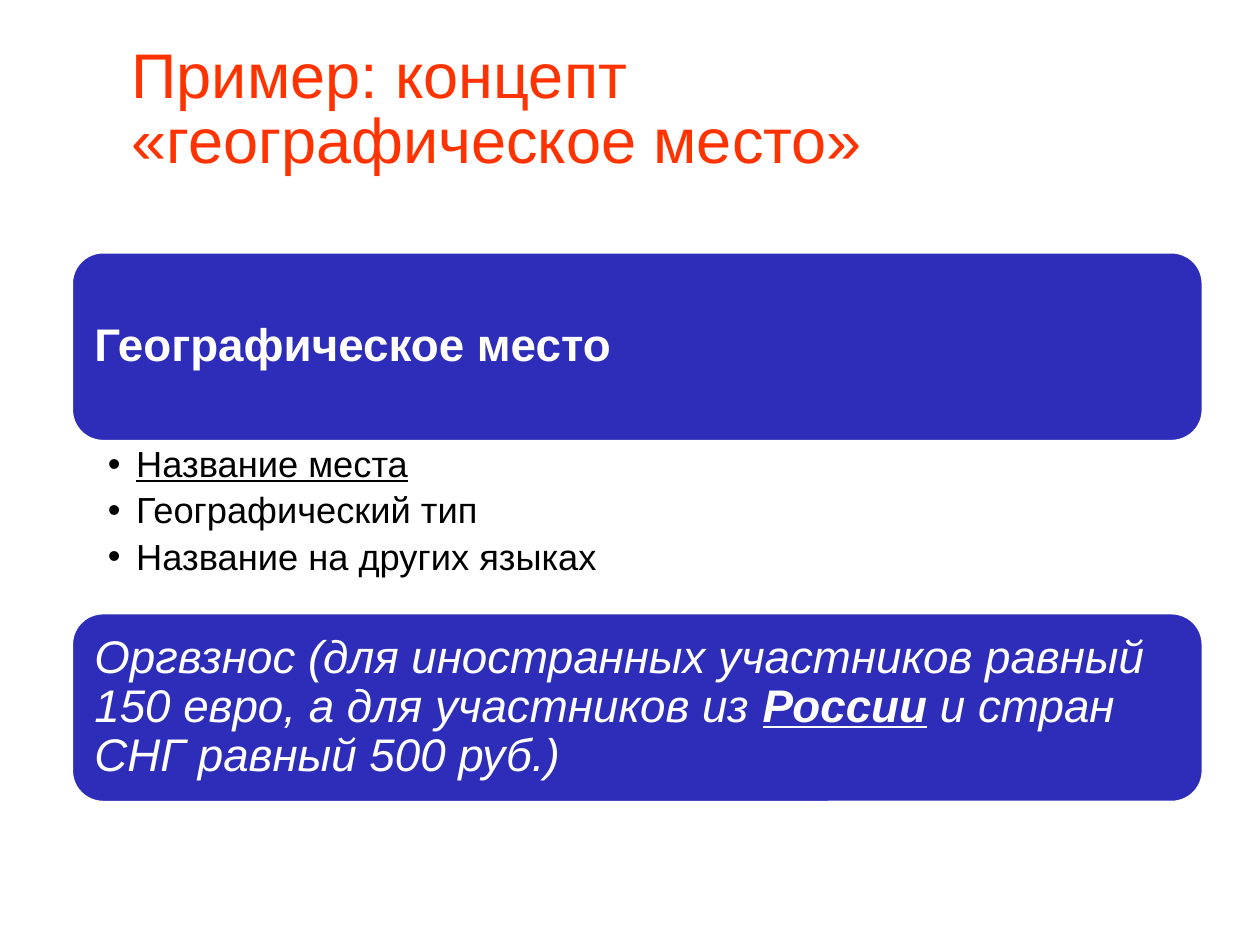
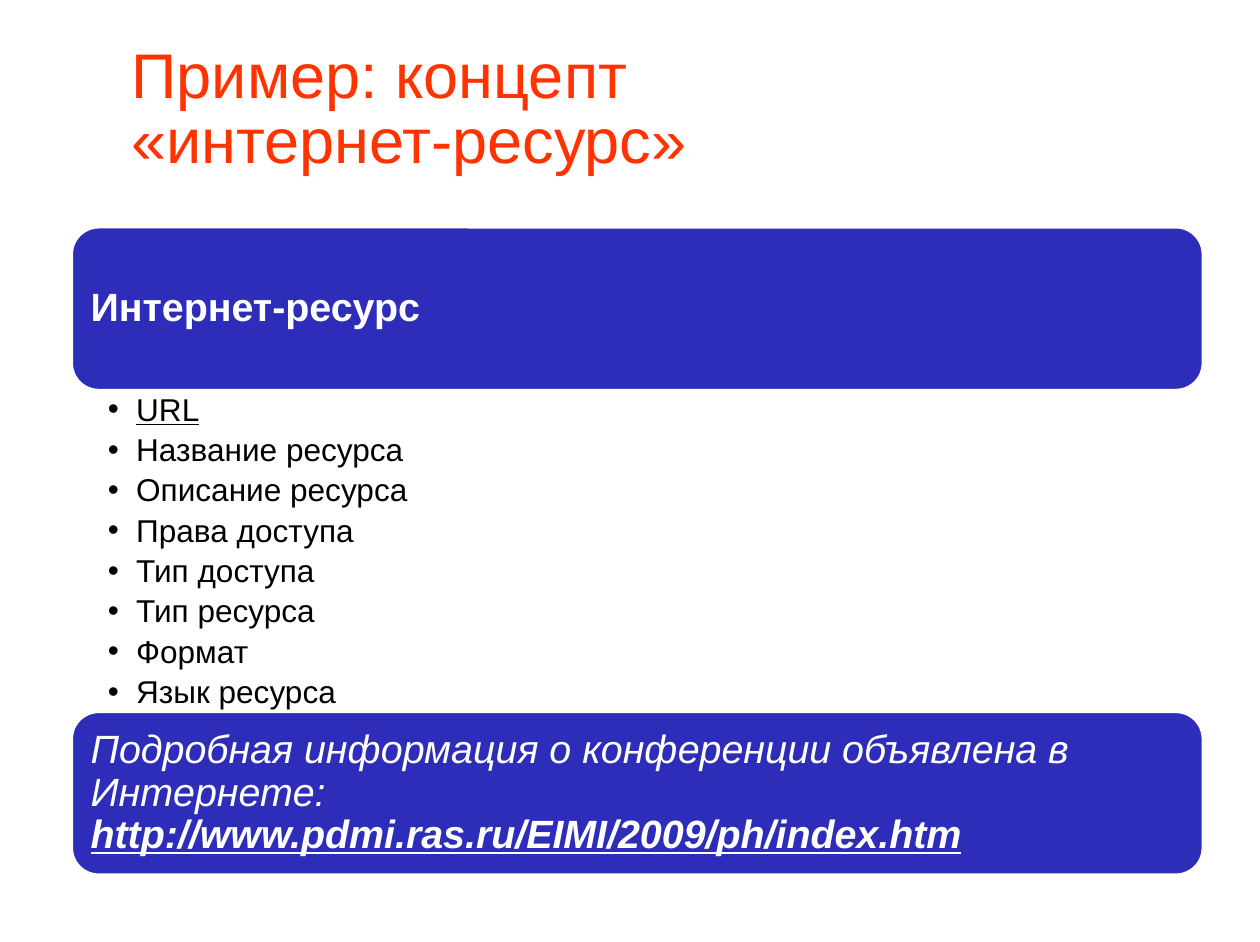
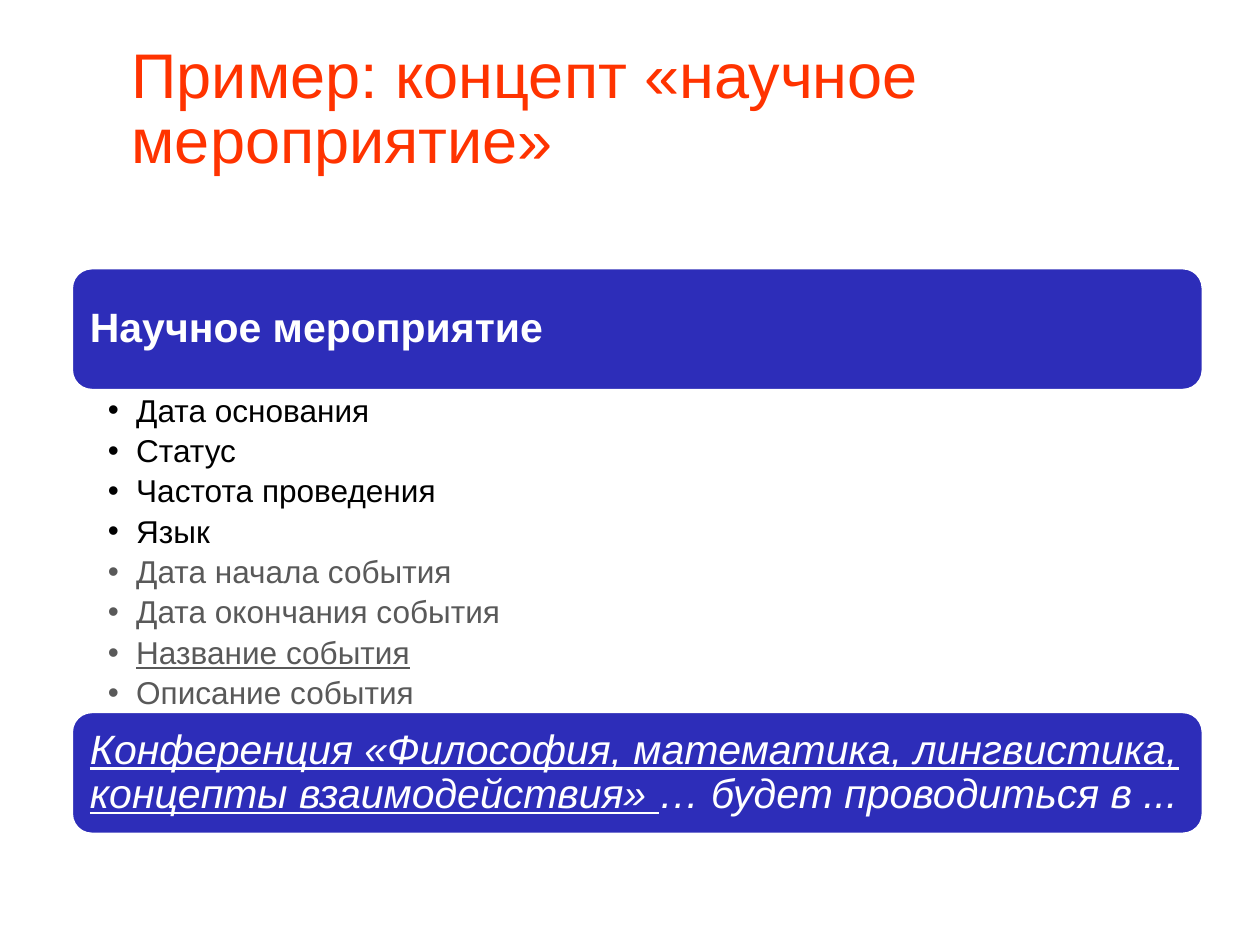
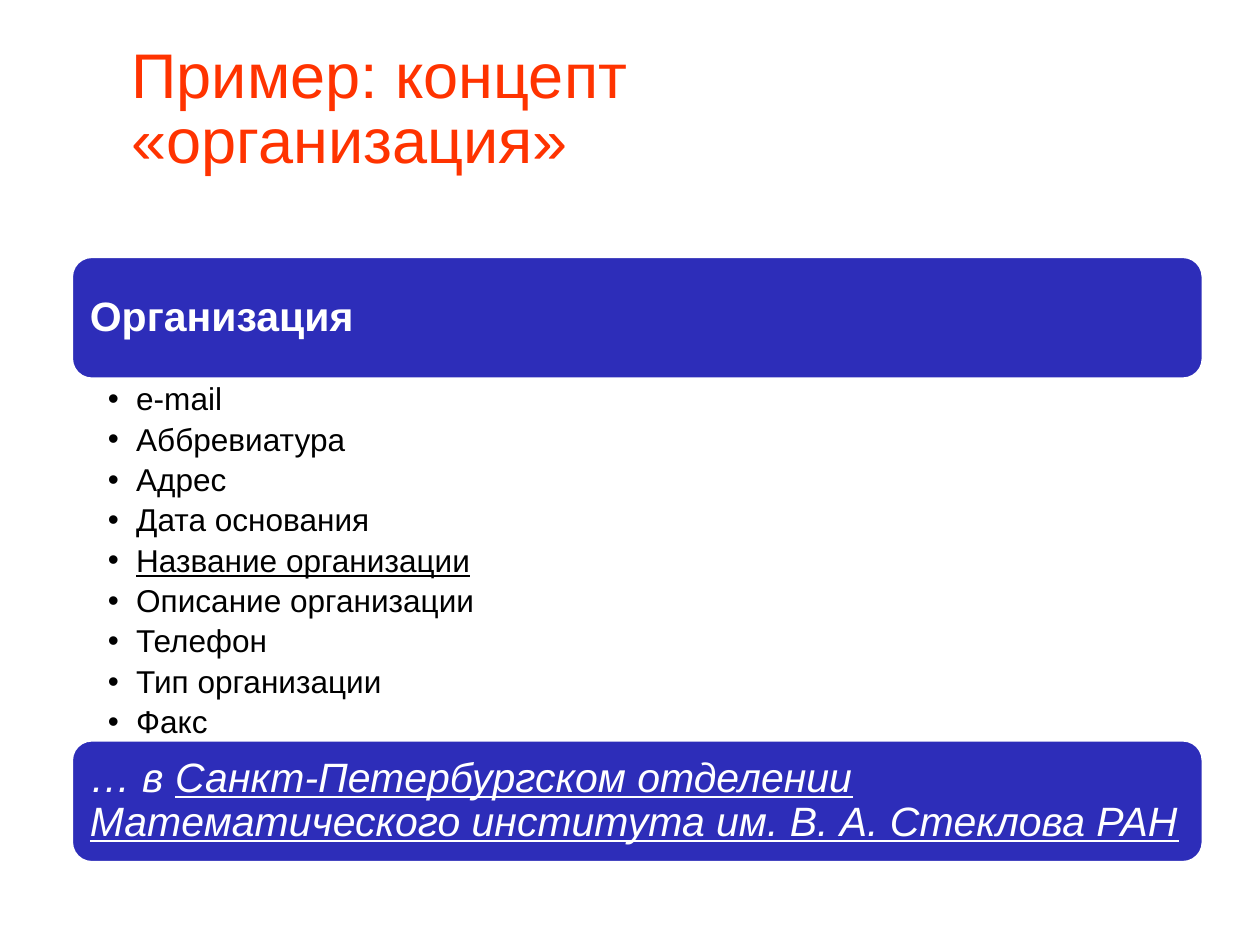
from dataclasses import dataclass

from lxml import etree
from pptx import Presentation, util as u
from pptx.dml.color import RGBColor
from pptx.enum import shapes, text
from pptx.oxml.ns import qn

PX = 9144  # EMU in one px, 100 px to the inch
FONT = "Arial"
RED = RGBColor(0xFF, 0x33, 0x00)
BLUE = RGBColor(0x2D, 0x2D, 0xB9)
WHITE = RGBColor(0xFF, 0xFF, 0xFF)
BLACK = RGBColor(0x00, 0x00, 0x00)
GREY = RGBColor(0x59, 0x59, 0x59)

LEFT, WIDE = 63, 997
INDENT = 25
AFTER = 0.2  # space after a list item, as a share of its text size


@dataclass(frozen=True)
class Bit:
    """A run of text with its own style."""
    words: str
    bold: bool = False
    slant: bool = False
    under: bool = False
    color: RGBColor = WHITE


@dataclass(frozen=True)
class Item:
    words: str
    under: bool = False
    color: RGBColor = BLACK


@dataclass(frozen=True)
class Concept:
    """One slide: a head bar, a list of fields and a sample bar."""
    title: str
    head: str
    items: list[Item]
    sample: list[Bit]
    top: int
    bar: int
    body: int
    size: int
    small: int
    pad: int
    inset: tuple[int, int]
    gap: int = 0


CONCEPTS = [
    Concept(
        "Пример: концепт «географическое место»",
        "Географическое место",
        [Item("Название места", under=True), Item("Географический тип"),
         Item("Название на других языках")],
        [Bit("Оргвзнос (для иностранных участников равный "
             "150 евро, а для участников из ", slant=True),
         Bit("России", bold=True, slant=True, under=True),
         Bit(" и стран СНГ равный 500 руб.)", slant=True)],
        top=222, bar=167, body=125, size=29, small=23, pad=12,
        inset=(23, 4), gap=26),
    Concept(
        "Пример: концепт «интернет-ресурс»",
        "Интернет-ресурс",
        [Item("URL", under=True), Item("Название ресурса"),
         Item("Описание ресурса"), Item("Права доступа"),
         Item("Тип доступа"), Item("Тип ресурса"), Item("Формат"),
         Item("Язык ресурса")],
        [Bit("Подробная информация о конференции объявлена в Интернете: ",
             slant=True),
         Bit("http://www.pdmi.ras.ru/EIMI/2009/ph/index.htm",
             bold=True, slant=True, under=True)],
        top=200, bar=144, body=283, size=25, small=20, pad=10,
        inset=(19, 3)),
    Concept(
        "Пример: концепт «научное мероприятие»",
        "Научное мероприятие",
        [Item("Дата основания"), Item("Статус"), Item("Частота проведения"),
         Item("Язык"), Item("Дата начала события", color=GREY),
         Item("Дата окончания события", color=GREY),
         Item("Название события", under=True, color=GREY),
         Item("Описание события", color=GREY)],
        [Bit("Конференция «Философия, математика, лингвистика, "
             "концепты взаимодействия» ", slant=True, under=True),
         Bit("… будет проводиться в ...", slant=True)],
        top=236, bar=108, body=283, size=26, small=20, pad=11,
        inset=(20, 4)),
    Concept(
        "Пример: концепт «организация»",
        "Организация",
        [Item("e-mail"), Item("Аббревиатура"), Item("Адрес"),
         Item("Дата основания"), Item("Название организации", under=True),
         Item("Описание организации"), Item("Телефон"),
         Item("Тип организации"), Item("Факс")],
        [Bit("… в ", slant=True),
         Bit("Санкт-Петербургском отделении Математического института "
             "им. В. А. Стеклова РАН", slant=True, under=True)],
        top=226, bar=108, body=318, size=26, small=20, pad=11,
        inset=(20, 4)),
]


def px(*nums: int) -> list[u.Emu]:
    return [u.Emu(n * PX) for n in nums]


def frame(shape, left: int, top: int, right: int, base: int, anchor):
    """Set the margins and the anchor, and return the text frame."""
    box = shape.text_frame
    box.word_wrap = True
    box.auto_size = text.MSO_AUTO_SIZE.NONE
    (box.margin_left, box.margin_top,
     box.margin_right, box.margin_bottom) = px(left, top, right, base)
    box.vertical_anchor = anchor
    return box


def write(para, bits: list[Bit], size: int, pitch: float = 0.9) -> None:
    para.alignment = text.PP_ALIGN.LEFT
    para.line_spacing = pitch
    for bit in bits:
        run = para.add_run()
        run.text = bit.words
        font = run.font
        font.name, font.size = FONT, u.Pt(size)
        font.bold, font.italic, font.underline = bit.bold, bit.slant, bit.under
        font.color.rgb = bit.color


def bullet(para) -> None:
    props = para._p.get_or_add_pPr()
    props.set("marL", str(INDENT * PX))
    props.set("indent", str(-INDENT * PX))
    etree.SubElement(props, qn("a:buFont")).set("typeface", FONT)
    etree.SubElement(props, qn("a:buChar")).set("char", "•")


def title(slide, words: str) -> None:
    shape = slide.shapes.add_textbox(*px(105, 57, 742, 82))
    box = frame(shape, 11, 6, 11, 6, text.MSO_ANCHOR.MIDDLE)
    write(box.paragraphs[0], [Bit(words, color=RED)], 40, 0.87)


def bar(slide, top: int, con: Concept, bits: list[Bit]) -> None:
    shape = slide.shapes.add_shape(shapes.MSO_SHAPE.ROUNDED_RECTANGLE,
                                   *px(LEFT, top, WIDE, con.bar))
    shape.shadow.inherit = False
    shape.fill.solid()
    shape.fill.fore_color.rgb = BLUE
    shape.line.color.rgb = WHITE
    shape.line.width = u.Pt(2)
    box = frame(shape, *[con.pad] * 4, text.MSO_ANCHOR.MIDDLE)
    write(box.paragraphs[0], bits, con.size)


def fields(slide, top: int, con: Concept) -> None:
    """Draw the bulleted list between the two bars."""
    shape = slide.shapes.add_textbox(*px(LEFT, top, WIDE, con.body))
    right, edge = con.inset
    box = frame(shape, 32, edge, right, edge, text.MSO_ANCHOR.TOP)
    for num, item in enumerate(con.items):
        para = box.add_paragraph() if num else box.paragraphs[0]
        bullet(para)
        para.space_after = u.Pt(con.small * AFTER)
        write(para, [Bit(item.words, under=item.under, color=item.color)],
              con.small)


def draw(slide, con: Concept) -> None:
    title(slide, con.title)
    mid = con.top + con.bar
    bar(slide, con.top, con, [Bit(con.head, bold=True)])
    fields(slide, mid, con)
    bar(slide, mid + con.body + con.gap, con, con.sample)


def main() -> None:
    deck = Presentation()
    deck.slide_width, deck.slide_height = px(1110, 830)
    blank = deck.slide_layouts[6]
    for con in CONCEPTS:
        draw(deck.slides.add_slide(blank), con)
    deck.save("out.pptx")


if __name__ == "__main__":
    main()
